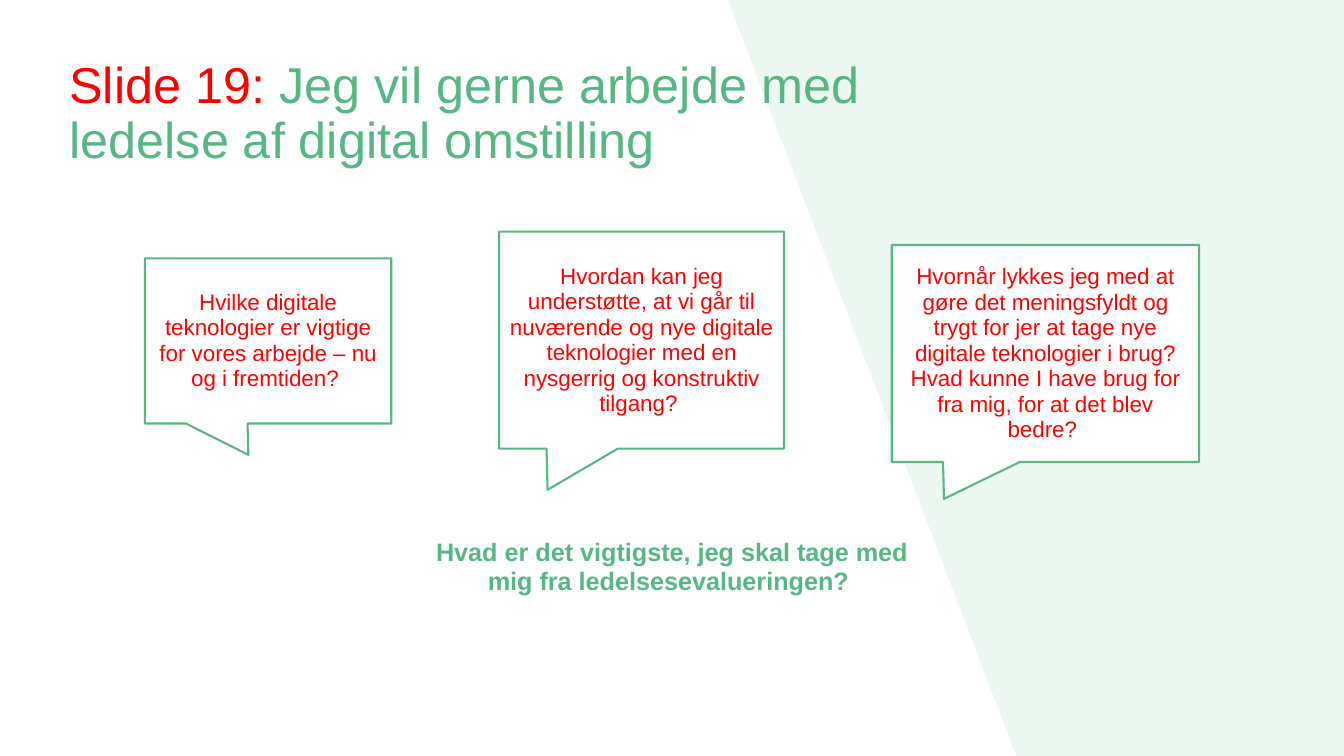
"""Build the slide with three question callouts on leading digital change."""
import pptx
import pptx.dml.color
import pptx.enum.shapes
import pptx.enum.text
import pptx.oxml.ns
import pptx.util
from lxml import etree

GREEN, RED, WHITE = "56B783", "FF0000", "FFFFFF"
ALIGN = pptx.enum.text.PP_ALIGN
ANCHOR = pptx.enum.text.MSO_ANCHOR


def color(value):
    return pptx.dml.color.RGBColor.from_string(value)


def apply(target, values):
    for name, value in values.items():
        setattr(target, name, value)


class SlideBuilder:
    def __init__(self, slide, font):
        self.shapes = slide.shapes
        self.font = font

    def band(self, points, fill, opacity):
        start, *others = [tuple(map(pptx.util.Pt, point)) for point in points]
        builder = self.shapes.build_freeform(*start)
        builder.add_line_segments(others, close=True)
        shape = builder.convert_to_shape()
        shape.shadow.inherit = False
        shape.fill.solid()
        shape.fill.fore_color.rgb = color(fill)
        shape.line.fill.background()
        tone = next(shape.element.iter(pptx.oxml.ns.qn("a:srgbClr")))
        etree.SubElement(tone, pptx.oxml.ns.qn("a:alpha"), val=str(opacity * 1000))

    def set_text(self, shape, spans, size, frame_format, para_format, bold=False):
        frame = shape.text_frame
        apply(frame, {"word_wrap": True, **frame_format})
        para = frame.paragraphs[0]
        apply(para, para_format)
        for text, tint in spans:
            span = para.add_run()
            span.text = text
            apply(span.font, {"name": self.font, "size": pptx.util.Pt(size), "bold": bold})
            span.font.color.rgb = color(tint)

    def text(self, place, *content, **options):
        box = self.shapes.add_textbox(*map(pptx.util.Pt, place))
        self.set_text(box, *content, **options)

    def callout(self, place, tip, text):
        kind = pptx.enum.shapes.MSO_SHAPE.RECTANGULAR_CALLOUT
        shape = self.shapes.add_shape(kind, *map(pptx.util.Pt, place))
        for index, value in enumerate(tip):
            shape.adjustments[index] = value
        shape.shadow.inherit = False
        shape.fill.solid()
        shape.fill.fore_color.rgb = color(WHITE)
        shape.line.color.rgb = color(GREEN)
        shape.line.width = pptx.util.Pt(1.5)
        self.set_text(shape, [(text, RED)], 16, {"vertical_anchor": ANCHOR.MIDDLE},
                      {"alignment": ALIGN.CENTER, "line_spacing": 0.95})


CALLOUTS = [
    ((103.5, 184.5, 176, 118), (-0.08, 0.69),
     "Hvilke digitale teknologier er vigtige for vores arbejde – nu og i fremtiden? "),
    ((637, 175, 219.5, 155), (-0.33, 0.67),
     "Hvornår lykkes jeg med at gøre det meningsfyldt og trygt for jer at tage nye "
     "digitale teknologier i brug? Hvad kunne I have brug for fra mig, for at det "
     "blev bedre? "),
    ((356.5, 165.5, 203.5, 155), (-0.33, 0.69),
     "Hvordan kan jeg understøtte, at vi går til nuværende og nye digitale "
     "teknologier med en nysgerrig og konstruktiv tilgang? "),
]


def main():
    deck = pptx.Presentation()
    apply(deck, {"slide_width": pptx.util.Pt(960), "slide_height": pptx.util.Pt(540)})
    page = SlideBuilder(deck.slides.add_slide(deck.slide_layouts[6]), "Arial")
    page.band([(520, 0), (726, 540), (960, 540), (960, 0)], GREEN, 10)
    page.text((42.5, 42, 629, 80),
              [("Slide 19:", RED),
               (" Jeg vil gerne arbejde med ledelse af digital omstilling", GREEN)],
              36, {"vertical_anchor": ANCHOR.MIDDLE}, {"line_spacing": 0.9})
    for callout in CALLOUTS:
        page.callout(*callout)
    page.text((302.5, 381, 355, 49),
              [("Hvad er det vigtigste, jeg skal tage med mig fra "
                "ledelsesevalueringen? ", GREEN)],
              18, {"vertical_anchor": ANCHOR.TOP},
              {"alignment": ALIGN.CENTER, "line_spacing": 0.95}, bold=True)
    deck.save("out.pptx")


if __name__ == "__main__":
    main()
